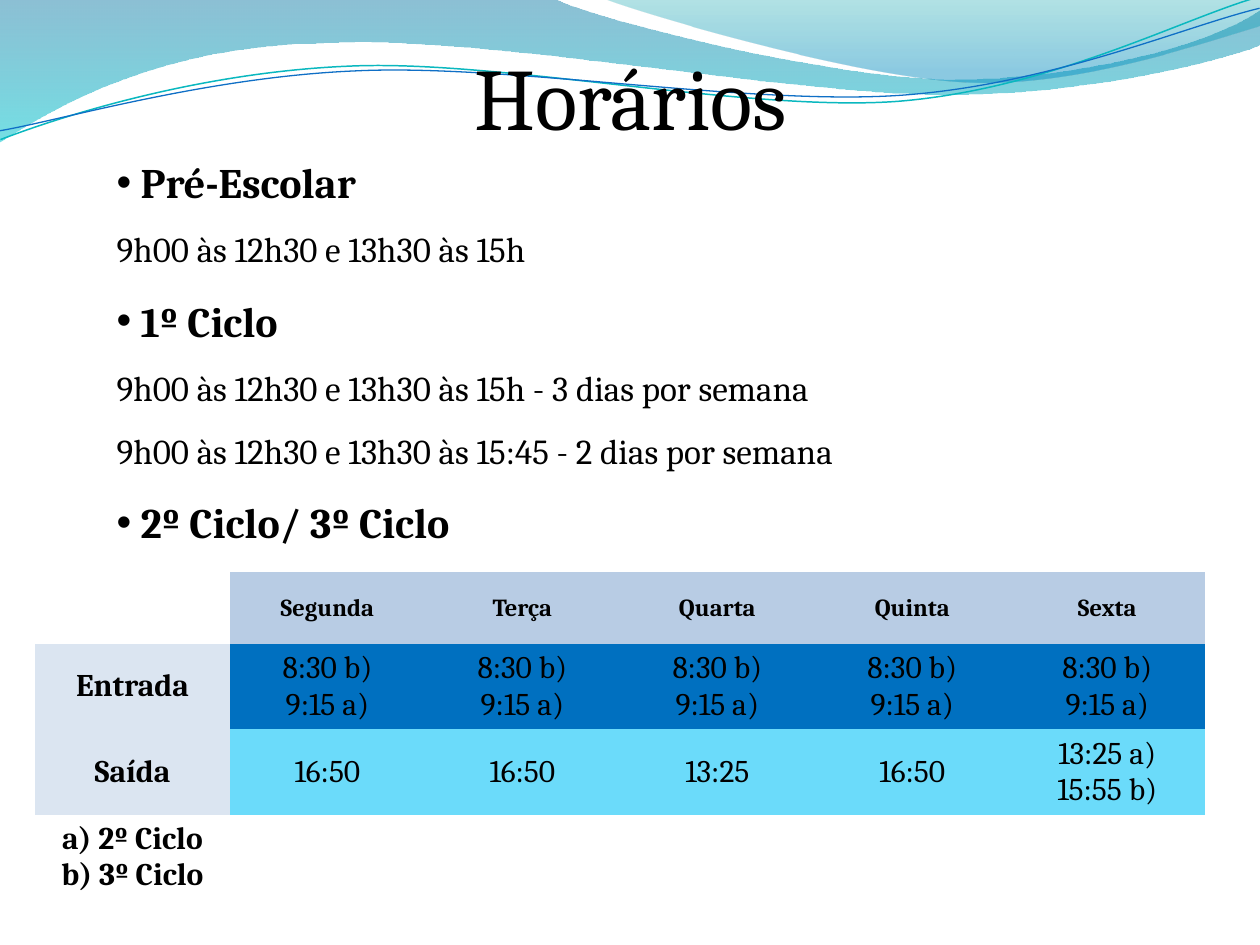
from lxml.etree import SubElement
from pptx import Presentation
from pptx.dml.color import RGBColor
from pptx.enum.text import MSO_ANCHOR as Anchor, MSO_AUTO_SIZE as AutoSize, PP_ALIGN as Align
from pptx.oxml.ns import qn
from pptx.util import Emu, Pt

PX = 914400 / 126
FONT = "Cambria"
BLACK = "000000"
PLAIN_TABLE = "{2D5ABB26-0587-4C30-8999-92F81FD0307C}"
LINE_TILT = -2.7

BAND = [(0, 0), (554, -1),
        [(600, 21), (837, 79), (955, 79)], [(1074, 79), (1207, 47), (1260, 11)],
        (1261, 45),
        [(1238, 55), (1096, 96), (940, 94)], [(784, 94), (481, 35), (324, 43)],
        [(163, 45), (58, 105), (-1, 142)]]
CREST = [(604, -1),
         [(641, 14), (859, 78), (969, 82)], [(1079, 87), (1211, 40), (1260, 26)],
         (1260, 0)]
TEAL_LINE = [(-2, 110), [(58, 90), (199, 52), (350, 53)],
             [(499, 53), (745, 118), (896, 114)], [(1049, 109), (1184, 45), (1260, 27)]]
BLUE_LINE = [(-2, 101), [(57, 94), (207, 57), (357, 58)],
             [(509, 58), (750, 112), (902, 108)], [(1052, 104), (1188, 52), (1262, 38)]]

SCHEDULE = [
    ("Pré-Escolar", ["9h00 às 12h30 e 13h30 às 15h"]),
    ("1º Ciclo", ["9h00 às 12h30 e 13h30 às 15h - 3 dias por semana",
                  "9h00 às 12h30 e 13h30 às 15:45 - 2 dias por semana"]),
    ("2º Ciclo/ 3º Ciclo", []),
]
WEEKDAYS = ["Segunda", "Terça", "Quarta", "Quinta", "Sexta"]
ENTRY = ["8:30 b)\n9:15 a)"] * 5
EXIT = ["16:50", "16:50", "13:25", "16:50", "13:25 a)\v15:55 b)"]
LEGEND = "a) 2º Ciclo\vb) 3º Ciclo"


def px(length):
    """Convert px to EMU."""
    return Emu(round(length * PX))


def rgb(value):
    """Turn a hex string into a colour."""
    return RGBColor.from_string(value)


def place(part, box):
    """Move a placeholder to a box in px."""
    part.left, part.top, part.width, part.height = map(px, box)


def style(paragraph, size, bold=False, align=Align.LEFT):
    """Format a whole paragraph."""
    paragraph.alignment = align
    paragraph.font.name = FONT
    paragraph.font.size = Pt(size)
    paragraph.font.bold = bold
    paragraph.font.color.rgb = rgb(BLACK)


def bend(wave, outline):
    """Turn each triple of line segments that stands for a curve into a Bézier."""
    segments = iter(list(wave._element.iter(qn("a:lnTo"))))
    for part in outline[1:]:
        first = next(segments)
        if isinstance(part, tuple):
            continue
        curve = first.makeelement(qn("a:cubicBezTo"))
        first.addprevious(curve)
        for segment in (first, next(segments), next(segments)):
            curve.append(segment[0])
            segment.getparent().remove(segment)


def add_outline(slide, box, outline, depth, closed):
    """Draw an outline in the box, at a given depth behind the text."""
    left, top = box[:2]
    corners = [point for part in outline
               for point in ([part] if isinstance(part, tuple) else part)]
    points = [(px(left + x), px(top + y)) for x, y in corners]
    builder = slide.shapes.build_freeform(*points[0], scale=1.0)
    builder.add_line_segments(points[1:], close=closed)
    wave = builder.convert_to_shape()
    bend(wave, outline)
    wave.shadow.inherit = False
    slide.shapes._spTree.insert(2 + depth, wave._element)
    return wave


def add_waves(slide, box):
    """Paint the wave header from back to front."""
    fills = [(BAND, [(0, "0074A1", 45), (1, "00C6CF", 55)]),
             (CREST, [(0, "00A1A9", 30), (0.8, "008BBF", 45)])]
    for depth, (outline, stops) in enumerate(fills):
        wave = add_outline(slide, box, outline, depth, True)
        wave.line.fill.background()
        wave.fill.gradient()
        wave.fill.gradient_angle = 270
        for stop, (position, color, _) in zip(wave.fill.gradient_stops, stops):
            stop.position = position
            stop.color.rgb = rgb(color)
        for tint, (_, _, opacity) in zip(wave._element.iter(qn("a:srgbClr")), stops):
            SubElement(tint, qn("a:alpha"), val=str(opacity * 1000))
    lines = [(TEAL_LINE, "0AB8BF", 0.85), (BLUE_LINE, "0F6FC6", 0.75)]
    for depth, (outline, color, width) in enumerate(lines, len(fills)):
        wave = add_outline(slide, box, outline, depth, False)
        wave.rotation = LINE_TILT
        wave.fill.background()
        wave.line.color.rgb = rgb(color)
        wave.line.width = Pt(width)


def add_heading(slide, box):
    """Fill the title placeholder."""
    heading = slide.shapes.title
    place(heading, box)
    heading.text_frame.text = "Horários"
    heading.text_frame.auto_size = AutoSize.NONE
    heading.text_frame.vertical_anchor = Anchor.TOP
    style(heading.text_frame.paragraphs[0], 50, align=Align.CENTER)


def add_schedule(slide, box):
    """List the school levels and their hours in the body placeholder."""
    schedule = slide.placeholders[1]
    place(schedule, box)
    frame = schedule.text_frame
    entries = [(text, text == level) for level, hours in SCHEDULE
               for text in [level, *hours]]
    frame.text = "\n".join(text for text, _ in entries)
    frame.auto_size = AutoSize.NONE
    frame.vertical_anchor = Anchor.TOP
    for paragraph, (_, is_level) in zip(frame.paragraphs, entries):
        style(paragraph, 24 if is_level else 20, is_level)
        paragraph.line_spacing = 1.5
        paragraph.space_before = paragraph.space_after = Pt(0)
        indent = px(24) if is_level else 0
        properties = paragraph._p.get_or_add_pPr()
        properties.set("marL", str(indent))
        properties.set("indent", str(-indent))
        if is_level:
            SubElement(properties, qn("a:buFont"), typeface="Arial")
            SubElement(properties, qn("a:buChar"), char="•")
        else:
            SubElement(properties, qn("a:buNone"))


def fill_cell(cell, text, color, size, bold):
    """Write and colour one timetable cell."""
    cell.fill.solid()
    cell.fill.fore_color.rgb = rgb(color)
    cell.vertical_anchor = Anchor.MIDDLE
    cell.text = text
    for paragraph in cell.text_frame.paragraphs:
        style(paragraph, size, bold, Align.CENTER)


def add_timetable(slide, box):
    """Build the weekly table of entry and exit times."""
    rows = [("", "FFFFFF", WEEKDAYS, "B8CCE4", 14, 72),
            ("Entrada", "DBE5F1", ENTRY, "0070C0", 18, 72),
            ("Saída", "DBE5F1", EXIT, "6BDBFA", 18, 82),
            (LEGEND, "FFFFFF", [], None, 18, 82)]
    timetable = slide.shapes.add_table(len(rows), 6, *map(px, box))
    table = timetable.table
    table.first_row = table.horz_banding = False
    table._tbl.tblPr.find(qn("a:tableStyleId")).text = PLAIN_TABLE
    for index, (label, label_fill, times, time_fill, size, height) in enumerate(rows):
        table.rows[index].height = px(height)
        fill_cell(table.cell(index, 0), label, label_fill, size, True)
        for column, time in enumerate(times, 1):
            fill_cell(table.cell(index, column), time, time_fill, size, index == 0)
    timetable.height = px(box[3])


def main():
    """Build the timetable slide."""
    deck = Presentation()
    deck.slide_width, deck.slide_height = px(1260), px(945)
    slide = deck.slides.add_slide(deck.slide_layouts[1])
    add_waves(slide, (0, 0, 1260, 142))
    add_heading(slide, (64, 37, 1133, 110))
    add_schedule(slide, (104, 125, 1081, 484))
    add_timetable(slide, (35, 572, 1170, 338))
    deck.save("out.pptx")


if __name__ == "__main__":
    main()
